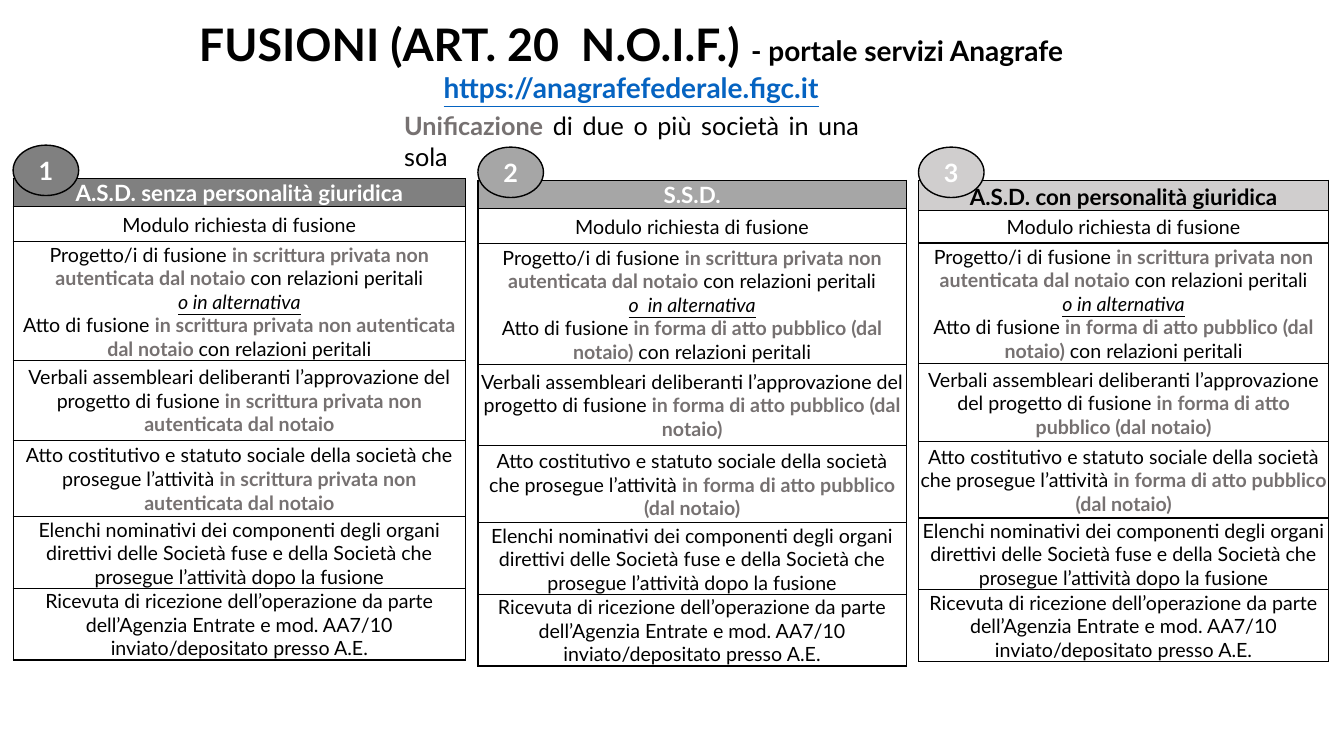
from pptx import Presentation
from pptx.dml.color import RGBColor
from pptx.enum import shapes, text
from pptx.oxml import parse_xml
from pptx.oxml.ns import nsdecls
from pptx.util import Inches, Pt

FONT = "Lato"
BLACK = RGBColor(0, 0, 0)
WHITE = RGBColor(255, 255, 255)
GREY = RGBColor(0x76, 0x71, 0x71)
BLUE = RGBColor(0x05, 0x63, 0xC1)
DARK = RGBColor(0x80, 0x80, 0x80)
MID = RGBColor(0xA6, 0xA6, 0xA6)
PALE = RGBColor(0xD0, 0xCE, 0xCE)

# Run styles
HEAD = {"size": Pt(32), "bold": True}
SUB = {"size": Pt(20), "bold": True}
LINK = {"size": Pt(20), "bold": True, "underline": True, "color": BLUE}
LEAD = {"size": Pt(18), "bold": True, "color": GREY}
BODY = {"size": Pt(18)}
BADGE = {"size": Pt(18), "bold": True, "color": WHITE}
CELL = {"size": Pt(14)}
KEY = {"size": Pt(14), "bold": True, "color": GREY}
ALT = {"size": Pt(14), "italic": True, "underline": True}

TITLE = [("FUSIONI (ART. 20  N.O.I.F.) ", HEAD),
         ("- portale servizi Anagrafe ", SUB),
         ("https://anagrafefederale.figc.it", LINK)]
INTRO = [("Unificazione", LEAD), (" di due o più società in una sola", BODY)]
PRIVATE = "in scrittura privata non autenticata dal notaio"
PUBLIC = "in forma di atto pubblico (dal notaio)"

# heading, fill, heading colour, form of the deed, alternative, width, top, row heights
KINDS = [
    ("A.S.D. senza personalità giuridica", DARK, WHITE, PRIVATE, "o in alternativa",
     4.49, 1.77, (0.27, 0.35, 1.18, 0.79, 0.76, 0.71, 0.71)),
    ("S.S.D.", MID, WHITE, PUBLIC, "o  in alternativa",
     4.25, 1.79, (0.27, 0.35, 1.2, 0.8, 0.77, 0.71, 0.71)),
    ("A.S.D. con personalità giuridica", PALE, BLACK, PUBLIC, "o in alternativa",
     4.07, 1.79, (0.3, 0.32, 1.2, 0.77, 0.76, 0.71, 0.71)),
]
LEFT, GAP = 0.13, 0.12
OVAL_W, OVAL_H, RISE = 0.65, 0.5, 0.33


def steps(form, alt):
    """Rows under the heading: each row is a list of paragraphs, each a list of runs."""
    return [
        [[("Modulo richiesta di fusione", CELL)]],
        [[("Progetto/i di fusione ", CELL), (PRIVATE + " ", KEY),
          ("con relazioni peritali", CELL)],
         [(alt, ALT)],
         [("Atto di fusione ", CELL), (form + " ", KEY),
          ("con relazioni peritali", CELL)]],
        [[("Verbali assembleari deliberanti l’approvazione del progetto di fusione ", CELL),
          (form, KEY)]],
        [[("Atto costitutivo e statuto sociale della società che prosegue l’attività ", CELL),
          (form, KEY)]],
        [[("Elenchi nominativi dei componenti degli organi direttivi delle Società fuse "
           "e della Società che prosegue l’attività dopo la fusione", CELL)]],
        [[("Ricevuta di ricezione dell’operazione da parte dell’Agenzia Entrate "
           "e mod. AA7/10 inviato/depositato presso A.E.", CELL)]],
    ]


def write(frame, paras, align=text.PP_ALIGN.CENTER):
    for i, runs in enumerate(paras):
        par = frame.add_paragraph() if i else frame.paragraphs[0]
        par.alignment = align
        for words, style in runs:
            run = par.add_run()
            run.text = words
            font = run.font
            font.name = FONT
            font.size = style["size"]
            font.bold = style.get("bold", False)
            font.italic = style.get("italic", False)
            font.underline = style.get("underline", False)
            font.color.rgb = style.get("color", BLACK)


def dress(cell, fill, anchor):
    """Give a cell its border, margins, fill and anchor."""
    props = cell._tc.get_or_add_tcPr()
    for side in "LRTB":
        props.append(parse_xml(
            f'<a:ln{side} {nsdecls("a")} w="12700"><a:solidFill>'
            f'<a:srgbClr val="{BLACK}"/></a:solidFill></a:ln{side}>'))
    cell.margin_left = cell.margin_right = cell.margin_top = Inches(0.01)
    cell.margin_bottom = 0
    cell.fill.solid()
    cell.fill.fore_color.rgb = fill
    cell.vertical_anchor = anchor


def grid(slide, left, kind):
    name, tint, ink, form, alt, width, top, highs = kind
    rows = [[[(name, {"size": Pt(16), "bold": True, "color": ink})]]]
    rows += steps(form, alt)
    table = slide.shapes.add_table(len(rows), 1, Inches(left), Inches(top),
                                   Inches(width), Inches(sum(highs))).table
    for i, (paras, high) in enumerate(zip(rows, highs)):
        table.rows[i].height = Inches(high)
        cell = table.cell(i, 0)
        if i:
            dress(cell, WHITE, text.MSO_ANCHOR.MIDDLE)
        else:
            dress(cell, tint, text.MSO_ANCHOR.BOTTOM)
        write(cell.text_frame, paras)


def badge(slide, left, top, label, tint):
    oval = slide.shapes.add_shape(shapes.MSO_SHAPE.OVAL, Inches(left), Inches(top),
                                  Inches(OVAL_W), Inches(OVAL_H))
    oval.shadow.inherit = False
    oval.fill.solid()
    oval.fill.fore_color.rgb = tint
    oval.line.color.rgb = BLACK
    oval.line.width = Pt(1)
    oval.text_frame.vertical_anchor = text.MSO_ANCHOR.MIDDLE
    write(oval.text_frame, [[(label, BADGE)]])


def main():
    deck = Presentation()
    deck.slide_width, deck.slide_height = Inches(13.33), Inches(7.5)
    slide = deck.slides.add_slide(deck.slide_layouts[5])

    title = slide.shapes.title
    title.left, title.top = Inches(0.86), Inches(0.12)
    title.width, title.height = Inches(10.8), Inches(0.98)
    title.text_frame.auto_size = text.MSO_AUTO_SIZE.NONE
    title.text_frame.vertical_anchor = text.MSO_ANCHOR.TOP
    write(title.text_frame, [TITLE])

    intro = slide.shapes.add_textbox(Inches(3.91), Inches(1.05), Inches(4.71), Inches(0.4))
    intro.text_frame.word_wrap = True
    write(intro.text_frame, [INTRO], text.PP_ALIGN.JUSTIFY)

    left, spots = LEFT, []
    for kind in KINDS:
        grid(slide, left, kind)
        spots.append((left, kind[6] - RISE, kind[1]))
        left += kind[5] + GAP
    for i, (x, y, tint) in enumerate(spots, 1):
        badge(slide, x, y, str(i), tint)

    deck.save("out.pptx")


if __name__ == "__main__":
    main()
